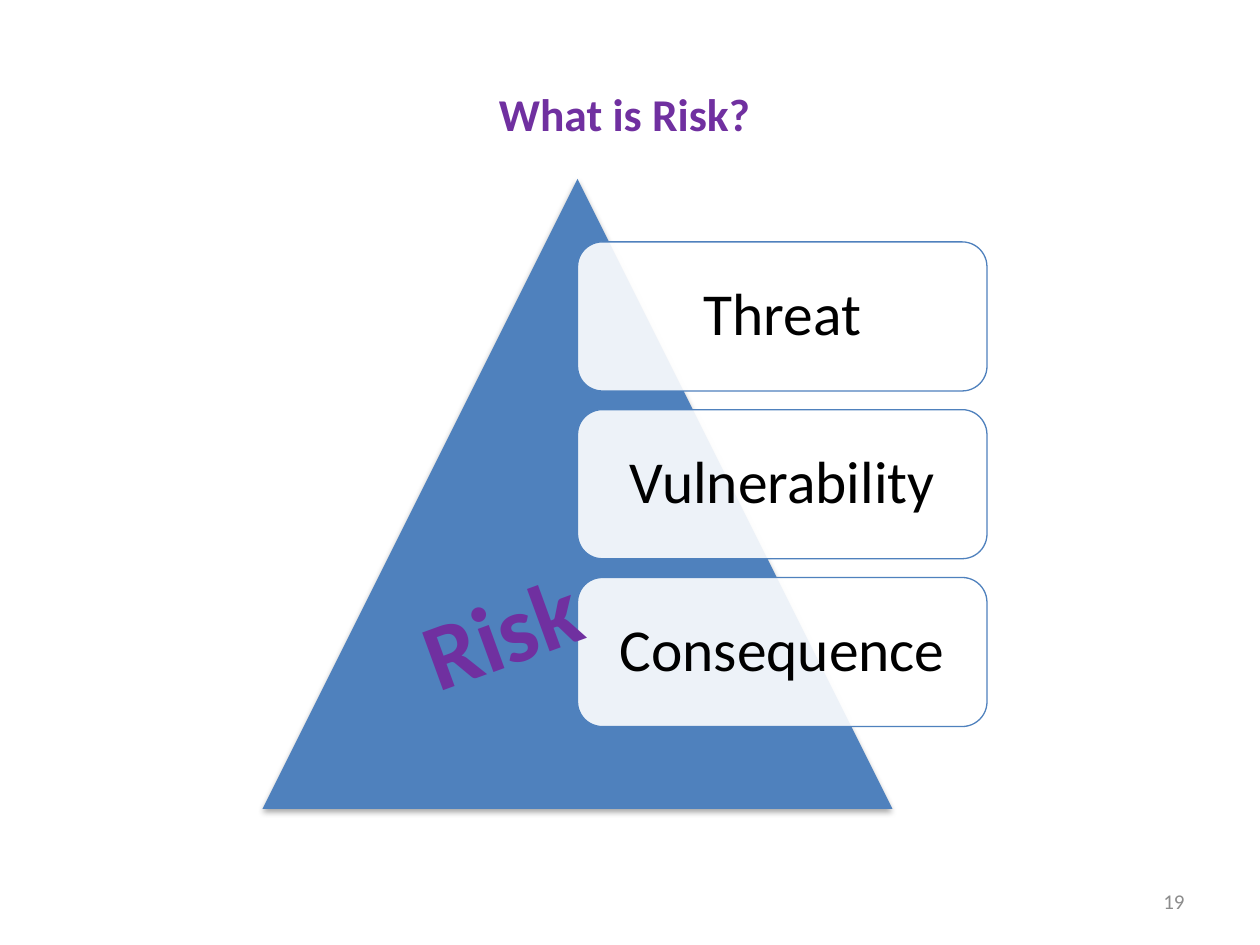
"""Build the risk pyramid slide."""
from lxml.etree import SubElement as Sub
from pptx import Presentation
from pptx.dml.color import RGBColor
from pptx.enum.shapes import MSO_SHAPE as Shape
from pptx.enum.text import MSO_ANCHOR as Anchor, PP_ALIGN as Align
from pptx.oxml.ns import qn
from pptx.util import Pt

PURPLE = RGBColor(0x70, 0x30, 0xA0)
BLUE = RGBColor(0x4F, 0x81, 0xBD)
WHITE = RGBColor(0xFF, 0xFF, 0xFF)
BLACK = RGBColor(0, 0, 0)
GRAY = RGBColor(0x8C, 0x8C, 0x8C)

TITLE = "What is Risk?"
PARTS = ["Threat", "Vulnerability", "Consequence"]
LABEL = "Risk"
PAGE = "19"

SIDE = 360
LEFT, TOP = 150, 102.24
CARD_W, CARD_H = 234, 85.2
CARD_TOP, STEP = 138.24, 95.88
INSET = 14.4


def write(shape, text, size, color, bold=False, align=Align.CENTER, space=None):
    para = shape.text_frame.paragraphs[0]
    para.alignment = align
    if space:
        para.line_spacing = space
    run = para.add_run()
    run.text = text
    font = run.font
    font.name, font.size, font.bold = "Calibri", Pt(size), bold
    font.color.rgb = color


def add_box(slide, left, top, width, height, wrap=True):
    box = slide.shapes.add_textbox(Pt(left), Pt(top), Pt(width), Pt(height))
    box.text_frame.word_wrap = wrap
    return box


def add_shape(slide, kind, left, top, width, height, color):
    shape = slide.shapes.add_shape(kind, Pt(left), Pt(top), Pt(width), Pt(height))
    shape.fill.solid()
    shape.fill.fore_color.rgb = color
    shape.line.fill.background()
    shape.shadow.inherit = False
    return shape


def set_alpha(node, share):
    Sub(node, qn("a:alpha"), val=str(share * 1000))


def add_shadow(shape):
    effect = shape.element.spPr.find(qn("a:effectLst"))
    shade = Sub(effect, qn("a:outerShdw"), blurRad=str(Pt(3.1)),
                dist=str(Pt(1.8)), dir="5400000", rotWithShape="0")
    set_alpha(Sub(shade, qn("a:srgbClr"), val="000000"), 35)


def add_card(slide, top, text):
    card = add_shape(slide, Shape.ROUNDED_RECTANGLE, LEFT + SIDE / 2, top,
                     CARD_W, CARD_H, WHITE)
    set_alpha(card.element.spPr.find(qn("a:solidFill"))[0], 90)
    card.line.color.rgb = BLUE
    card.line.width = Pt(0.75)
    frame = card.text_frame
    frame.word_wrap = True
    frame.vertical_anchor = Anchor.MIDDLE
    frame.margin_left = frame.margin_right = Pt(INSET - 4.15)
    frame.margin_top = frame.margin_bottom = Pt(INSET - 4.15)
    write(card, text, 34, BLACK, space=0.9)


def main():
    deck = Presentation()
    deck.slide_width, deck.slide_height = Pt(720), Pt(540)
    slide = deck.slides.add_slide(deck.slide_layouts[6])

    title = add_box(slide, 12, 30.24, 690, 50.4)
    write(title, TITLE, 26, PURPLE, bold=True, space=1.5)

    peak = add_shape(slide, Shape.ISOSCELES_TRIANGLE, LEFT, TOP, SIDE, SIDE, BLUE)
    add_shadow(peak)
    for row, text in enumerate(PARTS):
        add_card(slide, CARD_TOP + row * STEP, text)

    label = add_box(slide, 232.56, 324, 106.56, 72.72, wrap=False)
    label.rotation = 339.9
    write(label, LABEL, 54, PURPLE, bold=True)

    page = add_box(slide, 516, 500.4, 168, 28.8)
    page.text_frame.vertical_anchor = Anchor.MIDDLE
    write(page, PAGE, 12, GRAY, align=Align.RIGHT)

    deck.save("out.pptx")


if __name__ == "__main__":
    main()
